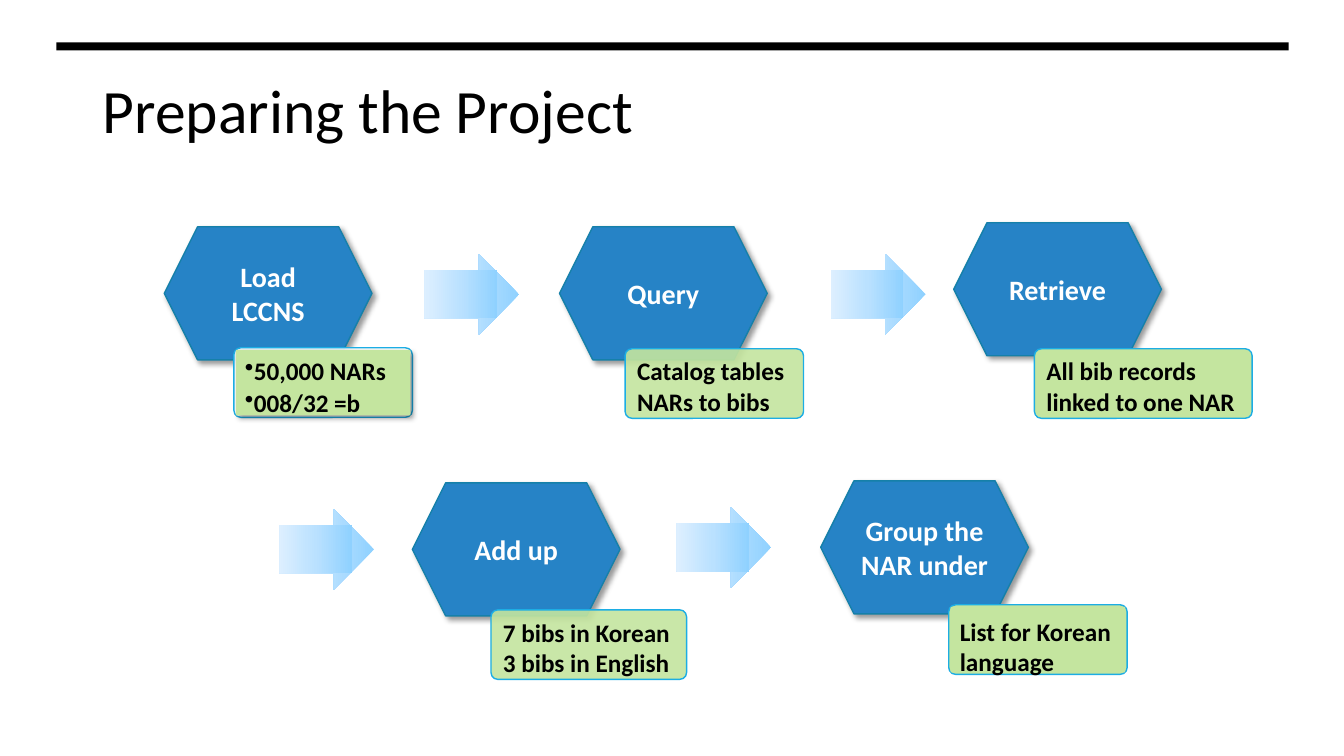
from dataclasses import dataclass

from lxml import etree
from pptx import Presentation
from pptx.dml.color import RGBColor
from pptx.enum.shapes import MSO_SHAPE as Preset
from pptx.enum.text import MSO_ANCHOR as Anchor, PP_ALIGN as Align
from pptx.oxml import parse_xml
from pptx.oxml.ns import nsdecls, qn
from pptx.shapes.autoshape import Shape
from pptx.slide import Slide
from pptx.text.text import TextFrame
from pptx.util import Inches, Pt

FONT = "Calibri"
BLACK = RGBColor(0x00, 0x00, 0x00)
WHITE = RGBColor(0xFF, 0xFF, 0xFF)
BLUE = RGBColor(0x26, 0x83, 0xC6)
BLUE_EDGE = RGBColor(0x15, 0x80, 0xA9)
GREEN = RGBColor(0xC4, 0xE5, 0x9F)
CYAN = RGBColor(0x1C, 0xAD, 0xE4)
ARROW_STOPS = (
    (0, RGBColor(0x8F, 0xD1, 0xFF)),
    (50, RGBColor(0xBA, 0xE1, 0xFF)),
    (100, RGBColor(0xDD, 0xEF, 0xFF)),
)
STEP_SIZE = (2.06, 1.32)
PANEL_GAP = 0.02


@dataclass(frozen=True)
class Step:
    left: float
    top: float
    label: str


@dataclass(frozen=True)
class Note:
    left: float
    top: float
    width: float
    lines: tuple[str, ...]
    fill: RGBColor = GREEN
    opacity: int = 100
    panel: bool = False
    bullets: bool = False


@dataclass(frozen=True)
class Arrow:
    left: float
    top: float


STEPS = (
    Step(1.63, 2.25, "Load LCCNS"),
    Step(5.55, 2.25, "Query"),
    Step(9.46, 2.21, "Retrieve"),
    Step(4.09, 4.79, "Add up"),
    Step(8.14, 4.77, "Group the NAR under"),
)
NOTES = (
    Note(2.32, 3.45, 1.77, ("50,000 NARs", "008/32 =b"), WHITE, 90, panel=True, bullets=True),
    Note(6.2, 3.46, 1.77, ("Catalog tables NARs to bibs",), opacity=90),
    Note(10.26, 3.46, 2.16, ("All bib records linked to one NAR",)),
    Note(9.41, 6.0, 1.77, ("List for Korean language",), panel=True),
    Note(4.87, 6.05, 1.94, ("7 bibs in Korean", "3 bibs in English"), opacity=90),
)
ARROWS = (Arrow(4.21, 2.52), Arrow(6.71, 5.03), Arrow(2.77, 5.05), Arrow(8.24, 2.52))


def add_block(slide: Slide, preset: Preset, left: float, top: float, width: float,
              height: float, fill: RGBColor | None = None, edge: RGBColor | None = None) -> Shape:
    block = slide.shapes.add_shape(
        preset, Inches(left), Inches(top), Inches(width), Inches(height))
    block.shadow.inherit = False
    if fill is not None:
        block.fill.solid()
        block.fill.fore_color.rgb = fill
    if edge is None:
        block.line.fill.background()
    else:
        block.line.color.rgb = edge
        block.line.width = Pt(1)
    return block


def write(frame: TextFrame, lines: tuple[str, ...], size: int, color: RGBColor,
          bold: bool = True, align: Align = Align.LEFT, bullets: bool = False) -> None:
    frame.word_wrap = True
    for index, line in enumerate(lines):
        paragraph = frame.add_paragraph() if index else frame.paragraphs[0]
        paragraph.alignment = align
        if bullets:
            add_bullet(paragraph._p.get_or_add_pPr())
            paragraph.line_spacing = 0.9
            paragraph.space_after = Pt(3)
        run = paragraph.add_run()
        run.text = line
        run.font.name = FONT
        run.font.size = Pt(size)
        run.font.bold = bold
        run.font.color.rgb = color


def add_bullet(properties: etree.ElementBase) -> None:
    properties.set("marL", str(Inches(0.06)))
    properties.set("indent", str(Inches(-0.06)))
    etree.SubElement(properties, qn("a:buChar"), char="•")


def add_shadow(block: Shape) -> None:
    effects = block._element.spPr.find(qn("a:effectLst"))
    effects.append(parse_xml(
        f'<a:outerShdw {nsdecls("a")} blurRad="{Pt(4)}" dist="{Pt(3)}" dir="2700000" '
        'algn="tl" rotWithShape="0"><a:srgbClr val="000000"><a:alpha val="40000"/>'
        '</a:srgbClr></a:outerShdw>'))


def set_opacity(block: Shape, percent: int) -> None:
    color = block._element.spPr.find(qn("a:solidFill")).find(qn("a:srgbClr"))
    etree.SubElement(color, qn("a:alpha"), val=str(percent * 1000))


def set_gradient(block: Shape) -> None:
    stops = "".join(f'<a:gs pos="{place * 1000}"><a:srgbClr val="{color}"/></a:gs>'
                    for place, color in ARROW_STOPS)
    gradient = parse_xml(f'<a:gradFill {nsdecls("a")} rotWithShape="1"><a:gsLst>{stops}</a:gsLst>'
                         '<a:lin ang="10800000" scaled="0"/></a:gradFill>')
    block._element.spPr.find(qn("a:prstGeom")).addnext(gradient)


def draw_step(slide: Slide, step: Step) -> None:
    hexagon = add_block(slide, Preset.HEXAGON, step.left, step.top, *STEP_SIZE, BLUE, BLUE_EDGE)
    add_shadow(hexagon)
    hexagon.text_frame.vertical_anchor = Anchor.MIDDLE
    write(hexagon.text_frame, (step.label,), 20, WHITE, align=Align.CENTER)


def draw_note(slide: Slide, note: Note) -> None:
    card = add_block(slide, Preset.ROUNDED_RECTANGLE, note.left, note.top, note.width, 0.69,
                     note.fill, CYAN)
    card.adjustments[0] = 0.1
    if note.opacity < 100:
        set_opacity(card, note.opacity)
    frame = card.text_frame
    if note.panel:
        panel = add_block(slide, Preset.RECTANGLE, note.left + PANEL_GAP, note.top + PANEL_GAP,
                          note.width - 2 * PANEL_GAP, 0.69 - 2 * PANEL_GAP, GREEN)
        if note.bullets:
            add_shadow(panel)
        frame = panel.text_frame
        frame.margin_left = frame.margin_right = Inches(0.09)
        frame.margin_top = frame.margin_bottom = Inches(0.09)
    frame.vertical_anchor = Anchor.TOP
    write(frame, note.lines, 18, BLACK, bullets=note.bullets)


def draw_arrow(slide: Slide, arrow: Arrow) -> None:
    head = add_block(slide, Preset.RIGHT_ARROW, arrow.left, arrow.top, 0.94, 0.8)
    head.adjustments[0] = 0.6
    shaft = add_block(slide, Preset.RECTANGLE, arrow.left, arrow.top + 0.16, 0.72, 0.48)
    for part in (head, shaft):
        set_gradient(part)


def main() -> None:
    deck = Presentation()
    deck.slide_width, deck.slide_height = Inches(13.33), Inches(7.5)
    slide = deck.slides.add_slide(deck.slide_layouts[6])

    # Top rule and title
    add_block(slide, Preset.RECTANGLE, 0.56, 0.42, 12.22, 0.08, BLACK)
    title = slide.shapes.add_textbox(Inches(0.92), Inches(0.4), Inches(11.5), Inches(1.45))
    title.text_frame.vertical_anchor = Anchor.MIDDLE
    write(title.text_frame, ("Preparing the Project",), 44, BLACK, bold=False)
    title.text_frame.paragraphs[0].line_spacing = 0.9

    # Process steps, their notes and the arrows between them
    for step in STEPS:
        draw_step(slide, step)
    for note in NOTES:
        draw_note(slide, note)
    for arrow in ARROWS:
        draw_arrow(slide, arrow)

    deck.save("out.pptx")


if __name__ == "__main__":
    main()
